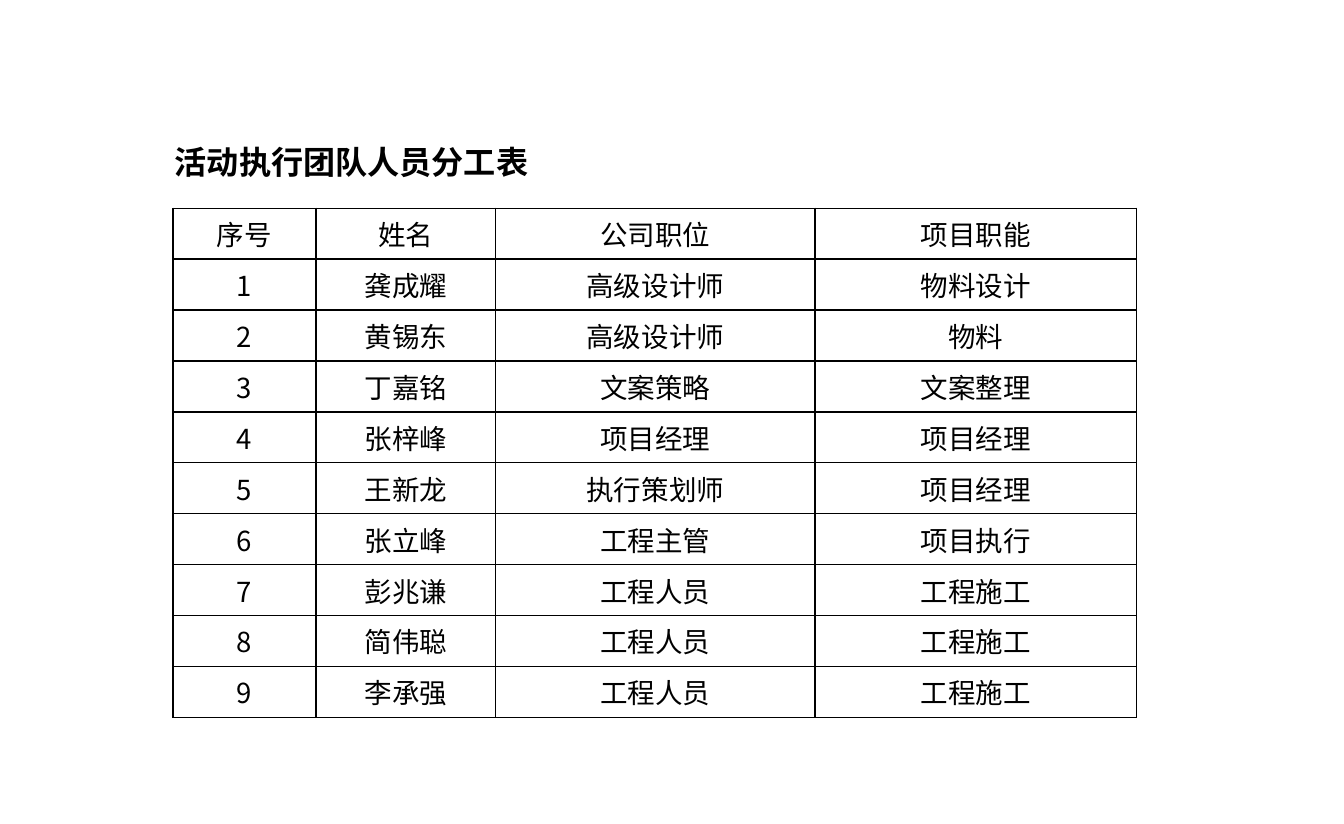
from lxml.etree import SubElement
from pptx import Presentation
from pptx.dml.color import RGBColor
from pptx.enum.text import MSO_AUTO_SIZE as AutoSize, PP_ALIGN as Align
from pptx.oxml.ns import qn
from pptx.util import Inches, Mm, Pt

TITLE = "活动执行团队人员分工表"
HEADINGS = ("序号", "姓名", "公司职位", "项目职能")
# Name, company position, project role; numbered in order
MEMBERS = [
    ("龚成耀", "高级设计师", "物料设计"),
    ("黄锡东", "高级设计师", "物料"),
    ("丁嘉铭", "文案策略", "文案整理"),
    ("张梓峰", "项目经理", "项目经理"),
    ("王新龙", "执行策划师", "项目经理"),
    ("张立峰", "工程主管", "项目执行"),
    ("彭兆谦", "工程人员", "工程施工"),
    ("简伟聪", "工程人员", "工程施工"),
    ("李承强", "工程人员", "工程施工"),
]
COLUMN_WIDTHS = (1.3, 1.63, 2.9, 2.92)
HEADING_HEIGHT, MEMBER_HEIGHT, ROSTER_HEIGHT = 0.45, 0.42, 4.27
THEME = {"font": "Noto Sans CJK SC", "ink": "000000",
         "title": 21, "body": 18, "rule": 1}


def style(paragraph, size, bold=False):
    font = paragraph.font
    font.size, font.bold, font.name = Pt(size), bold, THEME["font"]
    font.color.rgb = RGBColor.from_string(THEME["ink"])
    SubElement(font._element, qn("a:ea"), typeface=THEME["font"])


def add_borders(cell):
    properties = cell._tc.get_or_add_tcPr()
    for position, side in enumerate(("lnL", "lnR", "lnT", "lnB")):
        line = properties.makeelement(qn(f"a:{side}"), {"w": str(Pt(THEME["rule"]))})
        SubElement(SubElement(line, qn("a:solidFill")), qn("a:srgbClr"), val=THEME["ink"])
        properties.insert(position, line)


def add_title(slide):
    box = slide.shapes.add_textbox(Inches(1.49), Inches(1.24), Inches(3.83), Inches(0.45))
    frame = box.text_frame
    frame.word_wrap = True
    frame.auto_size = AutoSize.SHAPE_TO_FIT_TEXT
    frame.text = TITLE
    style(frame.paragraphs[0], THEME["title"], bold=True)


def add_roster(slide):
    rows = [HEADINGS] + [(str(n), *member) for n, member in enumerate(MEMBERS, 1)]
    heights = [HEADING_HEIGHT] + [MEMBER_HEIGHT] * len(MEMBERS)
    holder = slide.shapes.add_table(
        len(rows), len(HEADINGS), Inches(1.57), Inches(1.89),
        Inches(sum(COLUMN_WIDTHS)), Inches(ROSTER_HEIGHT))
    roster = holder.table
    roster.first_row = roster.horz_banding = False
    for column, width in zip(roster.columns, COLUMN_WIDTHS):
        column.width = Inches(width)
    for row, height, texts in zip(roster.rows, heights, rows):
        row.height = Inches(height)
        for cell, text in zip(row.cells, texts):
            cell.text = text
            cell.fill.background()
            add_borders(cell)
            paragraph = cell.text_frame.paragraphs[0]
            paragraph.alignment = Align.CENTER
            style(paragraph, THEME["body"])
    # Row changes reset the outer height, so it is set last
    holder.height = Inches(ROSTER_HEIGHT)


def main():
    deck = Presentation()
    deck.slide_width = Mm(310)
    deck.slide_height = Mm(190)
    slide = deck.slides.add_slide(deck.slide_layouts[6])
    add_roster(slide)
    add_title(slide)
    deck.save("out.pptx")


if __name__ == "__main__":
    main()
